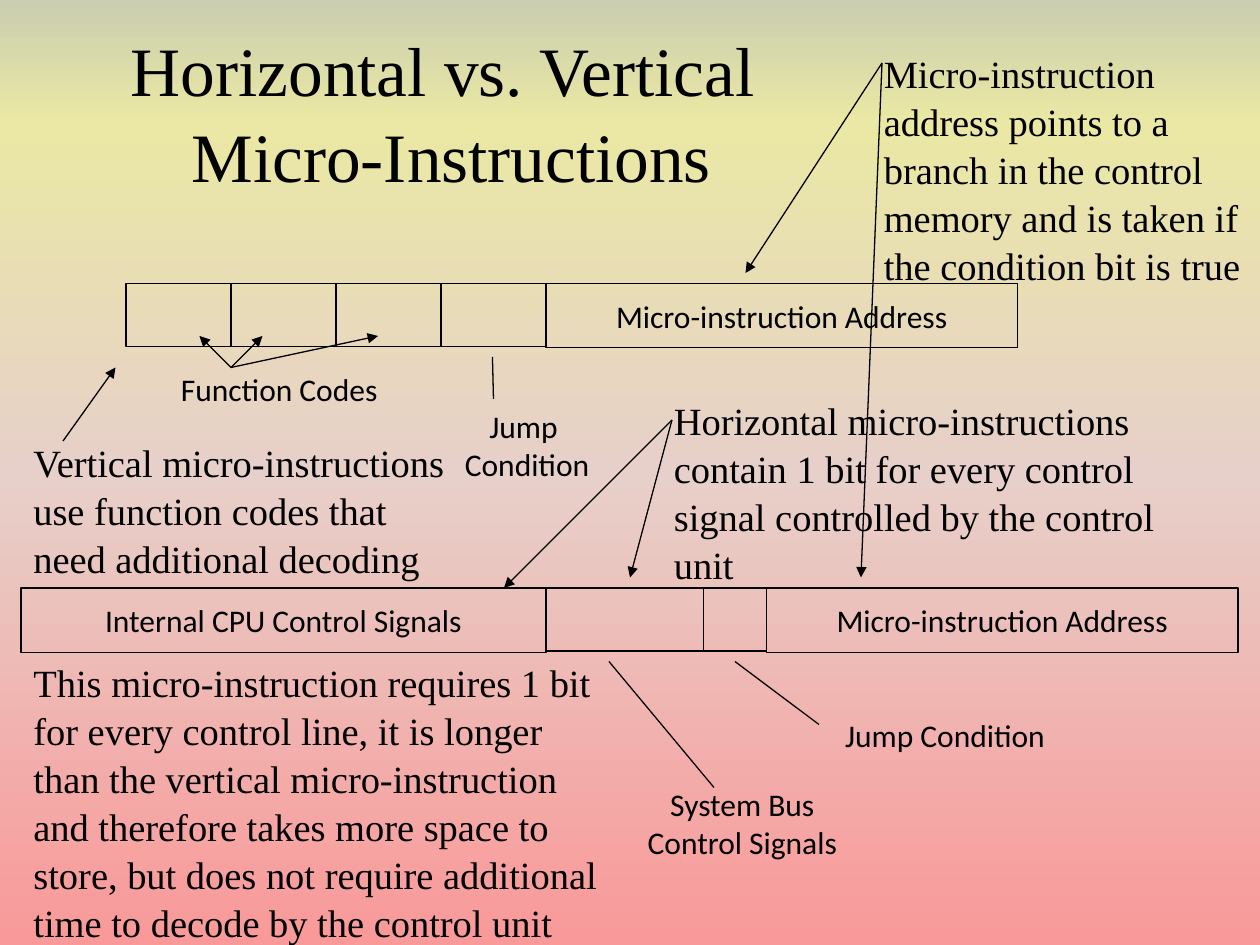
from lxml import etree
from pptx import Presentation
from pptx.dml.color import RGBColor
from pptx.enum.shapes import MSO_CONNECTOR, MSO_SHAPE
from pptx.enum.text import MSO_ANCHOR, MSO_AUTO_SIZE, PP_ALIGN
from pptx.oxml.ns import qn
from pptx.util import Inches, Pt

RECT, STRAIGHT = MSO_SHAPE.RECTANGLE, MSO_CONNECTOR.STRAIGHT
LEFT, CENTER = PP_ALIGN.LEFT, PP_ALIGN.CENTER
TOP, MIDDLE = MSO_ANCHOR.TOP, MSO_ANCHOR.MIDDLE
NO_FIT = MSO_AUTO_SIZE.NONE

COLORS = {"ink": "000000", "sage": "CBCEB0", "yellow": "EAE8A4",
          "sand": "E7D0C9", "coral": "F99999"}
BACKGROUND = [(0, "sage"), (13, "yellow"), (50, "sand"), (100, "coral")]
FORMATS = {
    "title": dict(font="Times New Roman", size=39.6, align=CENTER,
                  anchor=MIDDLE, spacing=1.045),
    "note": dict(font="Times New Roman", size=22, align=LEFT,
                 anchor=TOP, spacing=1.045),
    "label": dict(font="Calibri", size=18, align=CENTER,
                  anchor=MIDDLE, spacing=1.0),
}


def grid(*units):
    """Grid units to lengths: 120 columns by 90 rows, 12 to the inch."""
    return [Inches(u / 12) for u in units]


class Diagram:
    def __init__(self, prs):
        self.s = prs.slides.add_slide(prs.slide_layouts[5])
        self.ink = RGBColor.from_string(COLORS["ink"])

    def background(self, stops):
        fill = self.s.background.fill
        fill.gradient()
        fill.gradient_angle = 270
        gs_list = self.s._element.find(".//" + qn("a:gsLst"))
        for gs in list(gs_list):
            gs_list.remove(gs)
        for percent, name in stops:
            gs = etree.SubElement(gs_list, qn("a:gs"), pos=str(percent * 1000))
            etree.SubElement(gs, qn("a:srgbClr"), val=COLORS[name])

    def set_text(self, sp, text, style, wrap=True):
        fmt = FORMATS[style]
        tf = sp.text_frame
        tf.text = text
        frame = dict(word_wrap=wrap, auto_size=NO_FIT,
                     vertical_anchor=fmt["anchor"])
        for name, value in frame.items():
            setattr(tf, name, value)
        for p in tf.paragraphs:
            p.alignment = fmt["align"]
            p.line_spacing = fmt["spacing"]
            for r in p.runs:
                r.font.name = fmt["font"]
                r.font.size = Pt(fmt["size"])
                r.font.color.rgb = self.ink

    def title(self, text, *box):
        sp = self.s.shapes.title
        for name, value in zip(("left", "top", "width", "height"), grid(*box)):
            setattr(sp, name, value)
        self.set_text(sp, text, "title")

    def text(self, text, style, *box, wrap=True):
        sp = self.s.shapes.add_textbox(*grid(*box))
        self.set_text(sp, text, style, wrap)

    def fields(self, left, top, cells):
        """Draw one instruction word as adjoining (width, text) fields."""
        for width, text in cells:
            height = 6.12 if text else 6
            sp = self.s.shapes.add_shape(RECT, *grid(left, top, width, height))
            sp.shadow.inherit = False
            sp.fill.background()
            self.stroke(sp.line)
            if text:
                self.set_text(sp, text, "label")
            left += width

    def stroke(self, line):
        line.color.rgb = self.ink
        line.width = Pt(0.75)

    def lines(self, start, *ends, arrow=True):
        """Draw lines that fan out from one start point."""
        for end in ends:
            sp = self.s.shapes.add_connector(STRAIGHT, *grid(*start, *end))
            self.stroke(sp.line)
            props = sp._element.spPr
            if arrow:
                etree.SubElement(props.find(qn("a:ln")), qn("a:tailEnd"),
                                 type="triangle")
            etree.SubElement(props, qn("a:effectLst"))


def main():
    prs = Presentation()
    prs.slide_width, prs.slide_height = grid(120, 90)
    d = Diagram(prs)
    d.background(BACKGROUND)
    d.title("Horizontal vs. Vertical \vMicro-Instructions", 2, 3, 82, 15)

    # Vertical micro-instruction
    address = (44.9, "Micro-instruction Address")
    d.fields(12, 27, [(10, "")] * 4 + [address])
    d.text("Function Codes", "label", 12.8, 34, 27.6, 6, wrap=False)
    d.text("Jump \nCondition", "label", 41, 37, 18.4, 10.8, wrap=False)
    d.lines((46.9, 34), (47, 38), arrow=False)
    d.lines((22, 35), (19, 32), (25, 32), (36, 32))

    # Horizontal micro-instruction
    d.fields(2, 56, [(50, "Internal CPU Control Signals"), (15, ""), (6, ""),
                     address])
    d.text("Jump Condition", "label", 76, 67, 28, 6, wrap=False)
    d.text("System Bus\nControl Signals", "label", 57, 73, 27.4, 10.8,
           wrap=False)
    d.lines((58, 63), (68, 75), arrow=False)
    d.lines((70, 63), (78, 69), arrow=False)

    # Explanations and their arrows
    d.text("Horizontal micro-instructions contain 1 bit for every control "
           "signal controlled by the control unit", "note", 63, 37, 54, 23.4)
    d.lines((64, 40), (48, 56), (60, 55))
    d.text("Vertical micro-instructions\nuse function codes that\n"
           "need additional decoding", "note", 2, 41, 42.7, 14.5, wrap=False)
    d.lines((6, 42), (11, 35))
    d.text("This micro-instruction requires 1 bit for every control line, it "
           "is longer than the vertical micro-instruction and therefore takes "
           "more space to store, but does not require additional time to "
           "decode by the control unit", "note", 2, 62, 58, 27.8)
    d.text("Micro-instruction address points to a branch in the control "
           "memory and is taken if the condition bit is true",
           "note", 83, 4, 37, 23.4)
    d.lines((84, 6), (71, 26), (82, 55))

    prs.save("out.pptx")


if __name__ == "__main__":
    main()
